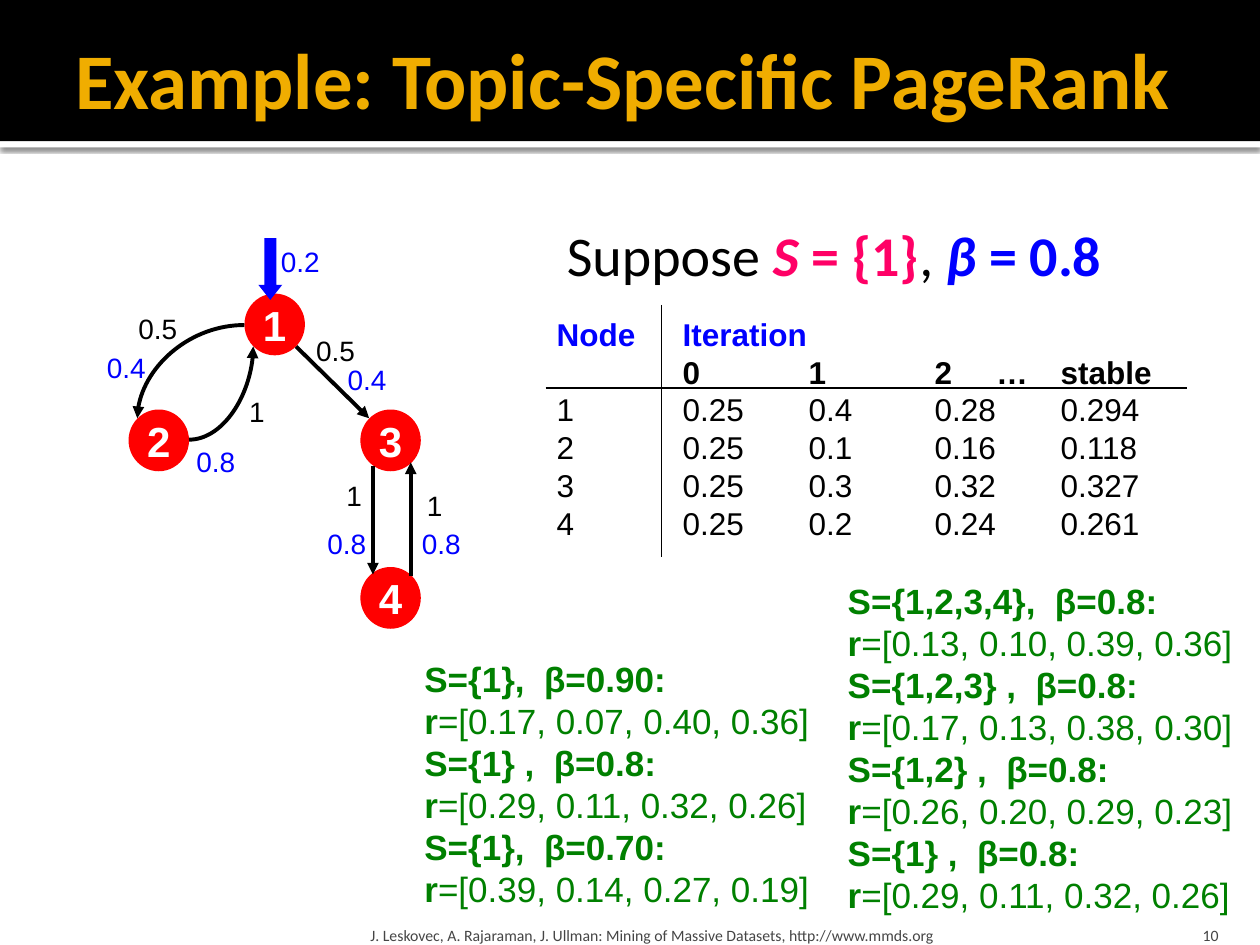
"""Build the Topic-Specific PageRank example slide."""
from dataclasses import dataclass, replace

from lxml.etree import SubElement
from pptx import Presentation
from pptx.dml.color import RGBColor
from pptx.enum.shapes import MSO_CONNECTOR, MSO_SHAPE
from pptx.enum.text import MSO_ANCHOR, MSO_AUTO_SIZE, PP_ALIGN
from pptx.oxml.ns import qn
from pptx.util import Inches, Pt

BLACK = RGBColor(0x00, 0x00, 0x00)
WHITE = RGBColor(0xFF, 0xFF, 0xFF)
GOLD = RGBColor(0xF0, 0xAD, 0x00)
RED = RGBColor(0xFF, 0x00, 0x00)
PINK = RGBColor(0xFF, 0x00, 0x66)
BLUE = RGBColor(0x00, 0x00, 0xFF)
GREEN = RGBColor(0x00, 0x80, 0x00)
GRAY = RGBColor(0x45, 0x45, 0x45)
INSETS = (0.1, 0.05, 0.1, 0.05)


@dataclass(frozen=True)
class Span:
    text: str
    color: RGBColor = BLACK
    bold: bool = False
    italic: bool = False


@dataclass(frozen=True)
class Node:
    name: str
    left: float
    top: float


@dataclass(frozen=True)
class Edge:
    start: tuple[float, float]
    end: tuple[float, float]
    curved: bool = False
    width: float = 2.25
    arrow: bool = True


@dataclass(frozen=True)
class Label:
    text: str
    left: float
    top: float
    width: float
    color: RGBColor
    height: float = 0.37


NODES = [Node("1", 1.94, 2.33), Node("2", 1.02, 3.25), Node("3", 2.86, 3.25), Node("4", 2.86, 4.5)]
EDGES = [
    Edge((1.94, 2.58), (1.09, 3.32), curved=True),
    Edge((1.5, 3.49), (2.01, 2.75), curved=True),
    Edge((2.35, 2.75), (2.93, 3.32)),
    Edge((2.96, 3.7), (2.96, 4.56)),
    Edge((3.26, 4.57), (3.26, 3.67)),
]
RULES = [
    Edge((4.33, 3.08), (9.42, 3.08), width=0.75, arrow=False),
    Edge((5.25, 2.42), (5.25, 4.42), width=0.75, arrow=False),
]
LABELS = [
    Label("0.2", 2.13, 1.89, 0.59, BLUE, height=0.43),
    Label("0.5", 2.41, 2.6, 0.51, BLACK),
    Label("0.5", 1, 2.42, 0.51, BLACK),
    Label("1", 1.88, 3.08, 0.33, BLACK),
    Label("1", 2.65, 3.75, 0.33, BLACK),
    Label("1", 3.29, 3.83, 0.33, BLACK),
    Label("0.4", 0.75, 2.73, 0.51, BLUE),
    Label("0.4", 2.66, 2.83, 0.51, BLUE),
    Label("0.8", 1.46, 3.48, 0.51, BLUE),
    Label("0.8", 2.5, 4.13, 0.51, BLUE),
    Label("0.8", 3.25, 4.13, 0.51, BLUE),
]
ITERATIONS = [
    ("1", "0.25", "0.4", "0.28", "0.294"),
    ("2", "0.25", "0.1", "0.16", "0.118"),
    ("3", "0.25", "0.3", "0.32", "0.327"),
    ("4", "0.25", "0.2", "0.24", "0.261"),
]
COLUMN_STOPS = (1, 2, 3, 4)
ELLIPSIS_STOPS = (1, 2, 3, 3.49, 4)
TOPIC_SETS = [
    ("S={1,2,3,4},  β=0.8:", "0.13, 0.10, 0.39, 0.36"),
    ("S={1,2,3} ,  β=0.8:", "0.17, 0.13, 0.38, 0.30"),
    ("S={1,2} ,  β=0.8:", "0.26, 0.20, 0.29, 0.23"),
    ("S={1} ,  β=0.8:", "0.29, 0.11, 0.32, 0.26"),
]
BETAS = [
    ("S={1},  β=0.90:", "0.17, 0.07, 0.40, 0.36"),
    ("S={1} ,  β=0.8:", "0.29, 0.11, 0.32, 0.26"),
    ("S={1},  β=0.70:", "0.39, 0.14, 0.27, 0.19"),
]


def write_text(frame, lines: list[list[Span]], *, size: float, font: str = "Arial",
               align=PP_ALIGN.LEFT, anchor=MSO_ANCHOR.TOP, wrap: bool = True,
               insets: tuple = INSETS) -> None:
    """Fill a text frame with lines of formatted spans."""
    frame.word_wrap = wrap
    frame.vertical_anchor = anchor
    frame.margin_left, frame.margin_top, frame.margin_right, frame.margin_bottom = map(Inches, insets)
    for index, line in enumerate(lines):
        para = frame.add_paragraph() if index else frame.paragraphs[0]
        para.alignment = align
        for span in line:
            run = para.add_run()
            run.text = span.text
            run.font.name, run.font.size = font, Pt(size)
            run.font.bold, run.font.italic = span.bold, span.italic
            run.font.color.rgb = span.color


def add_text(page, place: tuple, lines: list[list[Span]], *, grow: bool = False, **style):
    """Add a text box and return its frame."""
    frame = page.shapes.add_textbox(*map(Inches, place)).text_frame
    write_text(frame, lines, **style)
    frame.auto_size = MSO_AUTO_SIZE.SHAPE_TO_FIT_TEXT if grow else MSO_AUTO_SIZE.NONE
    return frame


def add_solid(page, kind, place: tuple, color: RGBColor):
    """Add a filled shape without outline or shadow."""
    shape = page.shapes.add_shape(kind, *map(Inches, place))
    shape.shadow.inherit = False
    shape.fill.solid()
    shape.fill.fore_color.rgb = color
    shape.line.fill.background()
    return shape


def add_bar_shadow(bar) -> None:
    """Cast a soft shadow below the bar."""
    effects = bar._element.spPr.find(qn("a:effectLst"))
    shadow = SubElement(effects, qn("a:outerShdw"), blurRad=str(Pt(2.5)), dist=str(Pt(0.8)),
                        dir="5400000", algn="tl", rotWithShape="0")
    color = SubElement(shadow, qn("a:srgbClr"), val=str(BLACK))
    SubElement(color, qn("a:alpha"), val="60000")


def add_edge(page, edge: Edge) -> None:
    """Draw a straight or quarter-curve line, with an arrowhead if asked."""
    kind = MSO_CONNECTOR.CURVE if edge.curved else MSO_CONNECTOR.STRAIGHT
    connector = page.shapes.add_connector(kind, *map(Inches, edge.start + edge.end))
    connector.line.color.rgb = BLACK
    connector.line.width = Pt(edge.width)
    properties = connector._element.spPr
    if edge.curved:
        properties.find(qn("a:prstGeom")).set("prst", "curvedConnector2")
    if edge.arrow:
        SubElement(properties.find(qn("a:ln")), qn("a:tailEnd"), type="triangle")
    SubElement(properties, qn("a:effectLst"))


def add_iterations(page) -> None:
    """Write the tabbed iteration values and their rules."""
    lines = [[Span("Node\tIteration", BLUE, bold=True)], [Span("\t0\t1\t2\t…\tstable", bold=True)]]
    lines += [[Span("\t".join(row))] for row in ITERATIONS]
    frame = add_text(page, (4.32, 2.45, 4.95, 1.9), lines, size=18, wrap=False, grow=True)
    for para in frame.paragraphs:
        stops = SubElement(para._p.get_or_add_pPr(), qn("a:tabLst"))
        for stop in ELLIPSIS_STOPS if "…" in para.text else COLUMN_STOPS:
            SubElement(stops, qn("a:tab"), pos=str(Inches(stop)), algn="l")
    for rule in RULES:
        add_edge(page, rule)


def add_results(page, place: tuple, results: list[tuple[str, str]]) -> None:
    """List each setting with its rank vector."""
    heading = Span("", GREEN, bold=True)
    lines = []
    for setting, ranks in results:
        lines.append([replace(heading, text=setting)])
        lines.append([replace(heading, text="r"), Span(f"=[{ranks}]", GREEN)])
    add_text(page, place, lines, size=20, wrap=False, grow=True)


def main() -> None:
    """Build and save the deck."""
    deck = Presentation()
    deck.slide_width, deck.slide_height = Inches(10), Inches(7.5)
    page = deck.slides.add_slide(deck.slide_layouts[6])
    add_bar_shadow(add_solid(page, MSO_SHAPE.RECTANGLE, (0, 1.12, 10, 0.05), WHITE))
    add_solid(page, MSO_SHAPE.RECTANGLE, (0, 0, 10, 1.12), BLACK)
    add_text(page, (0.5, 0.08, 9.5, 1.08), [[Span("Example: Topic-Specific PageRank", GOLD, bold=True)]],
             size=45, font="Calibri", anchor=MSO_ANCHOR.MIDDLE, insets=(0.1, 0.05, 0.05, 0.05))
    for node in NODES:
        circle = add_solid(page, MSO_SHAPE.OVAL, (node.left, node.top, 0.48, 0.49), RED)
        write_text(circle.text_frame, [[Span(node.name, WHITE, bold=True)]], size=24,
                   align=PP_ALIGN.CENTER, anchor=MSO_ANCHOR.MIDDLE, wrap=False)
    for edge in EDGES:
        add_edge(page, edge)
    premise = [Span("Suppose "), Span("S", PINK, True, True), Span(" = {1}", PINK, True), Span(", "),
               Span("β ", BLUE, True, True), Span("= 0.8", BLUE, True)]
    add_text(page, (4.4, 1.7, 4.46, 0.64), [premise], size=32, font="Calibri", wrap=False, grow=True)
    add_iterations(page)
    arrow = add_solid(page, MSO_SHAPE.DOWN_ARROW, (2.05, 1.89, 0.19, 0.49), BLUE)
    arrow.adjustments[0], arrow.adjustments[1] = 0.5, 0.63
    for label in LABELS:
        add_text(page, (label.left, label.top, label.width, label.height),
                 [[Span(label.text, label.color)]], size=16, grow=True)
    add_text(page, (8.97, 7.2, 0.8, 0.3), [[Span("10", GRAY)]], size=9, font="Calibri",
             align=PP_ALIGN.RIGHT, anchor=MSO_ANCHOR.BOTTOM, insets=(0.1, 0.05, 0.1, 0))
    credit = "J. Leskovec, A. Rajaraman, J. Ullman: Mining of Massive Datasets, http://www.mmds.org"
    add_text(page, (2.89, 7.2, 6.02, 0.3), [[Span(credit, GRAY)]], size=9, font="Calibri",
             anchor=MSO_ANCHOR.BOTTOM, insets=(0.05, 0.05, 0.05, 0))
    add_results(page, (6.63, 4.55, 3.27, 2.79), TOPIC_SETS)
    add_results(page, (3.27, 5.17, 3.27, 2.12), BETAS)
    deck.save("out.pptx")


if __name__ == "__main__":
    main()
